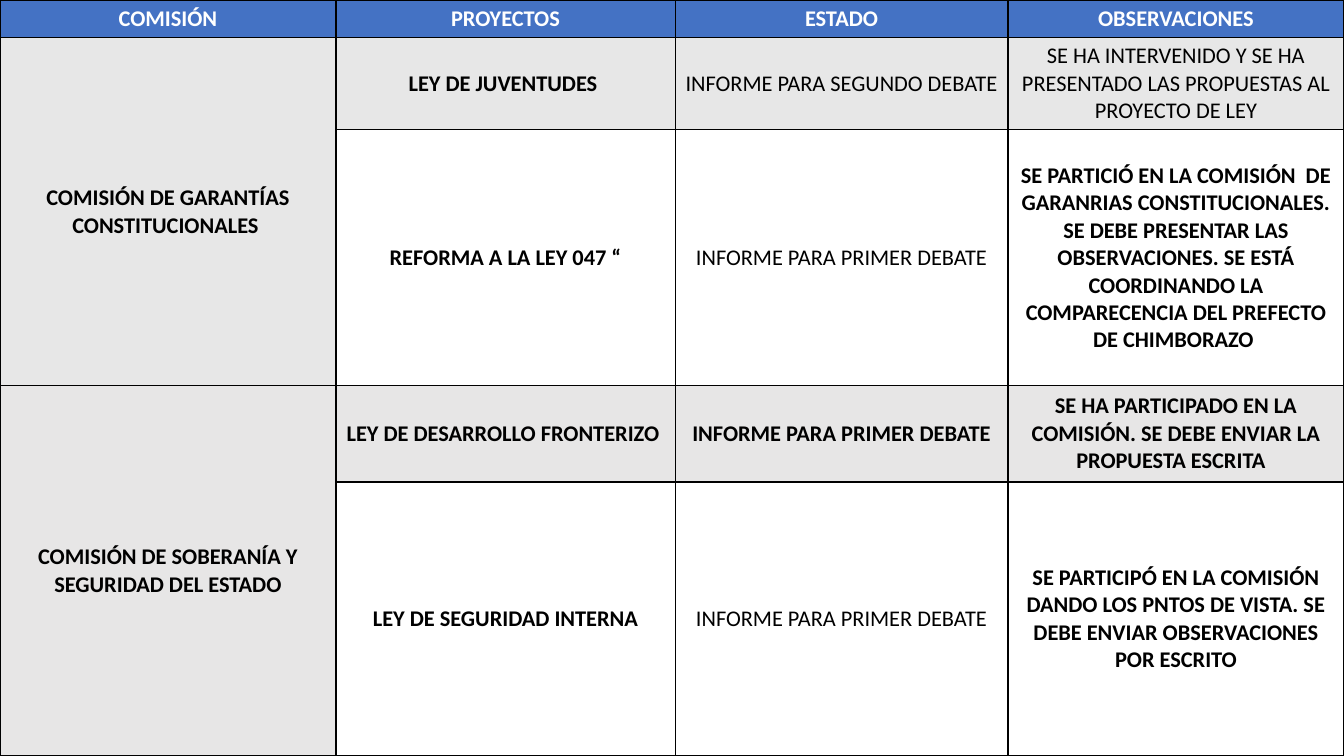
from lxml.etree import SubElement
from pptx import Presentation
from pptx.dml.color import RGBColor
from pptx.enum.text import MSO_ANCHOR as Anchor, PP_ALIGN as Align
from pptx.oxml.ns import qn
from pptx.util import Pt

PX = 9525
COLORS = {
    "header": "4472C4", "gray": "E7E7E7", "warm_gray": "E7E6E6",
    "white": "FFFFFF", "black": "000000",
}
COL_WIDTHS = [320, 323, 317, 320]

# Each cell is (text, bold); None continues the cell above.
HEADER = [(t, True) for t in ("COMISIÓN", "PROYECTOS", "ESTADO", "OBSERVACIONES")]
GUARANTEES = [
    [("COMISIÓN DE GARANTÍAS CONSTITUCIONALES ", True),
     ("LEY DE JUVENTUDES ", True),
     ("INFORME PARA SEGUNDO DEBATE", False),
     ("SE HA INTERVENIDO Y SE HA PRESENTADO LAS PROPUESTAS AL PROYECTO DE LEY", False)],
    [None,
     ("REFORMA A LA LEY 047 “", True),
     ("INFORME PARA PRIMER DEBATE", False),
     ("SE PARTICIÓ EN LA COMISIÓN  DE GARANRIAS CONSTITUCIONALES. SE DEBE PRESENTAR "
      "LAS OBSERVACIONES. SE ESTÁ COORDINANDO LA COMPARECENCIA DEL PREFECTO DE "
      "CHIMBORAZO ", True)],
]
SOVEREIGNTY = [
    [("COMISIÓN DE SOBERANÍA Y SEGURIDAD DEL ESTADO", True),
     ("LEY DE DESARROLLO FRONTERIZO ", True),
     ("INFORME PARA PRIMER DEBATE", True),
     ("SE HA PARTICIPADO EN LA COMISIÓN. SE DEBE ENVIAR LA PROPUESTA ESCRITA  ", True)],
    [None,
     ("LEY DE SEGURIDAD INTERNA", True),
     ("INFORME PARA PRIMER DEBATE", False),
     ("SE PARTICIPÓ EN LA COMISIÓN DANDO LOS PNTOS DE VISTA. SE DEBE ENVIAR "
      "OBSERVACIONES POR ESCRITO", True)],
]


def rgb(name):
    return RGBColor.from_string(COLORS[name])


def write(tf, text, *, bold=False, color="black", size=16, font="Calibri"):
    p = tf.paragraphs[0]
    p.alignment = Align.CENTER
    r = p.add_run()
    r.text = text
    r.font.name, r.font.size, r.font.bold = font, Pt(size), bold
    r.font.color.rgb = rgb(color)


def set_borders(cell, color="black", width=1):
    tc_pr = cell._tc.get_or_add_tcPr()
    for i, side in enumerate(("lnL", "lnR", "lnT", "lnB")):
        ln = SubElement(tc_pr, qn(f"a:{side}"), w=str(Pt(width)))
        fill = SubElement(ln, qn("a:solidFill"))
        SubElement(fill, qn("a:srgbClr"), val=COLORS[color])
        tc_pr.insert(i, ln)


def add_commission_table(s, top, heights, rows, fills):
    """Add a full-width table whose last two rows share one commission cell."""
    frame = s.shapes.add_table(len(rows), len(COL_WIDTHS), 0, top * PX,
                               sum(COL_WIDTHS) * PX, sum(heights) * PX)
    table = frame.table
    for col, width in zip(table.columns, COL_WIDTHS):
        col.width = width * PX
    for i, (height, row, fill) in enumerate(zip(heights, rows, fills)):
        table.rows[i].height = height * PX
        is_header = fill == "header"
        for j, content in enumerate(row):
            cell = table.cell(i, j)
            cell.fill.solid()
            cell.fill.fore_color.rgb = rgb(fill)
            set_borders(cell)
            cell.vertical_anchor = Anchor.TOP if is_header else Anchor.MIDDLE
            if content:
                text, bold = content
                write(cell.text_frame, text, bold=bold,
                      color="white" if is_header else "black")
    last = len(rows) - 1
    table.cell(last - 1, 0).merge(table.cell(last, 0))


def main():
    prs = Presentation()
    prs.slide_width, prs.slide_height = 1280 * PX, 720 * PX
    s = prs.slides.add_slide(prs.slide_layouts[6])
    upper_heights = [35, 88, 244]
    add_commission_table(s, 0, upper_heights, [HEADER] + GUARANTEES,
                         ["header", "gray", "white"])
    add_commission_table(s, sum(upper_heights), [92, 261], SOVEREIGNTY,
                         ["warm_gray", "white"])
    prs.save("out.pptx")


if __name__ == "__main__":
    main()
